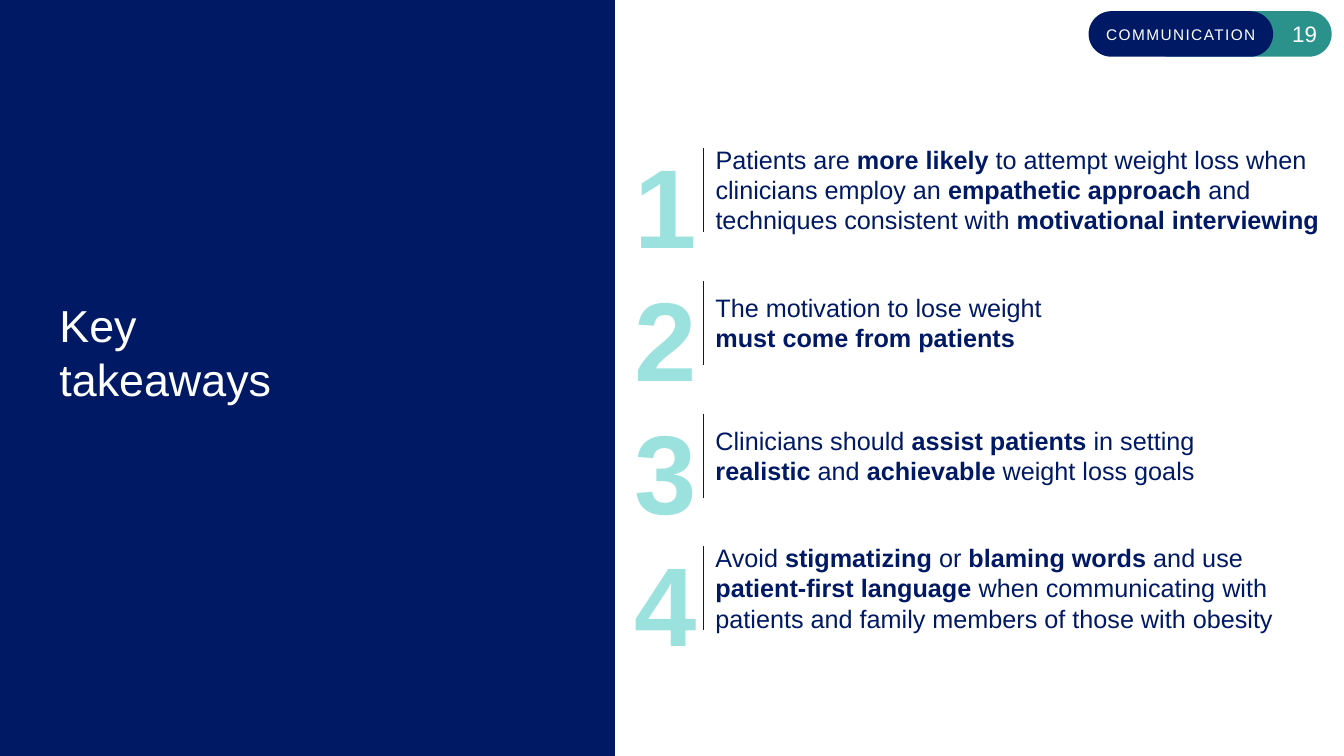
from dataclasses import dataclass
from lxml import etree
from pptx import Presentation
from pptx.dml.color import RGBColor as RGB
from pptx.enum.shapes import MSO_CONNECTOR as Link, MSO_SHAPE as Shape
from pptx.enum.text import MSO_ANCHOR as Anchor, MSO_AUTO_SIZE as Fit, PP_ALIGN as Align
from pptx.oxml.ns import qn
from pptx.util import Pt


@dataclass
class Theme:
    font: str = "Arial"
    navy: str = "001965"
    teal: str = "2A918B"
    mint: str = "9BE2DE"
    white: str = "FFFFFF"
    title: int = 32
    body: int = 18
    digit: int = 80
    page: int = 16
    tag: int = 11


theme = Theme()


def write(shape, text, size, color, bold=False, align=Align.LEFT, anchor=Anchor.TOP,
          pad=(0, 0), wrap=True, fit=Fit.NONE, lead=None, space=None):
    frame = shape.text_frame
    frame.auto_size = fit
    frame.word_wrap = wrap
    frame.vertical_anchor = anchor
    frame.margin_left = frame.margin_right = Pt(pad[0])
    frame.margin_top = frame.margin_bottom = Pt(pad[1])
    para = frame.paragraphs[0]
    para.alignment = align
    para.line_spacing = lead
    for part, chunk in enumerate(text.split("**")):
        for row, words in enumerate(chunk.split("\n")):
            if row:
                para.add_line_break()
            if not words:
                continue
            run = para.add_run()
            run.text = words
            font = run.font
            font.name = theme.font
            font.size = Pt(size)
            font.bold = bold or part % 2 == 1
            font.color.rgb = RGB.from_string(color)
            if space:
                font._element.set("spc", str(space))


def block(kind, left, top, width, height, color):
    shape = slide.shapes.add_shape(kind, Pt(left), Pt(top), Pt(width), Pt(height))
    shape.shadow.inherit = False
    shape.fill.solid()
    shape.fill.fore_color.rgb = RGB.from_string(color)
    shape.line.fill.background()
    return shape


deck = Presentation()
deck.slide_width, deck.slide_height = Pt(960), Pt(540)
slide = deck.slides.add_slide(deck.slide_layouts[6])

block(Shape.RECTANGLE, 0, 0, 439.2, 540, theme.navy)

pills = [
    (819.4, theme.teal, "19", theme.page, Align.RIGHT, None),
    (777.6, theme.navy, "COMMUNICATION", theme.tag, Align.CENTER, 100),
]
for left, color, text, size, align, space in pills:
    pill = block(Shape.ROUNDED_RECTANGLE, left, 8, 131.8, 32.5, color)
    pill.adjustments[0] = 0.5
    write(pill, text, size, theme.white, align=align, anchor=Anchor.MIDDLE,
          pad=(5.76, 2.88), space=space)

title = slide.shapes.add_textbox(Pt(42.5), Pt(32.4), Pt(364.3), Pt(437.8))
write(title, "Key \ntakeaways", theme.title, theme.white, anchor=Anchor.MIDDLE)

points = [
    ("Patients are **more likely **to attempt weight loss when clinicians employ an "
     "**empathetic approach **and techniques consistent with **motivational interviewing**",
     452.2, 3),
    ("The motivation to lose weight\n**must come from patients**", 400.3, 2),
    ("Clinicians should **assist patients **in setting **realistic** and **achievable**"
     " weight loss goals", 400.3, 2),
    ("Avoid **stigmatizing** or **blaming words **and use **patient-first language **"
     "when communicating with patients and family members of those with obesity",
     424.8, 3),
]
pitch = 94.8
for step, (text, width, rows) in enumerate(points):
    mid = 135.8 + step * pitch
    digit = slide.shapes.add_textbox(Pt(452.9), Pt(mid - 57.4), Pt(44.6), Pt(105.8))
    write(digit, str(step + 1), theme.digit, theme.mint, bold=True, wrap=False,
          fit=Fit.SHAPE_TO_FIT_TEXT, lead=1.2)

    height = 7.2 + rows * 21.8
    note = slide.shapes.add_textbox(Pt(504), Pt(mid - height / 2), Pt(width), Pt(height))
    write(note, text, theme.body, theme.navy, pad=(7.2, 3.6), fit=Fit.SHAPE_TO_FIT_TEXT)

    rule = slide.shapes.add_connector(Link.STRAIGHT, Pt(502.6), Pt(mid - 30),
                                      Pt(502.6), Pt(mid + 30))
    rule.line.color.rgb = RGB.from_string(theme.navy)
    rule.line.width = Pt(1)
    etree.SubElement(rule._element.spPr, qn("a:effectLst"))

deck.save("out.pptx")
